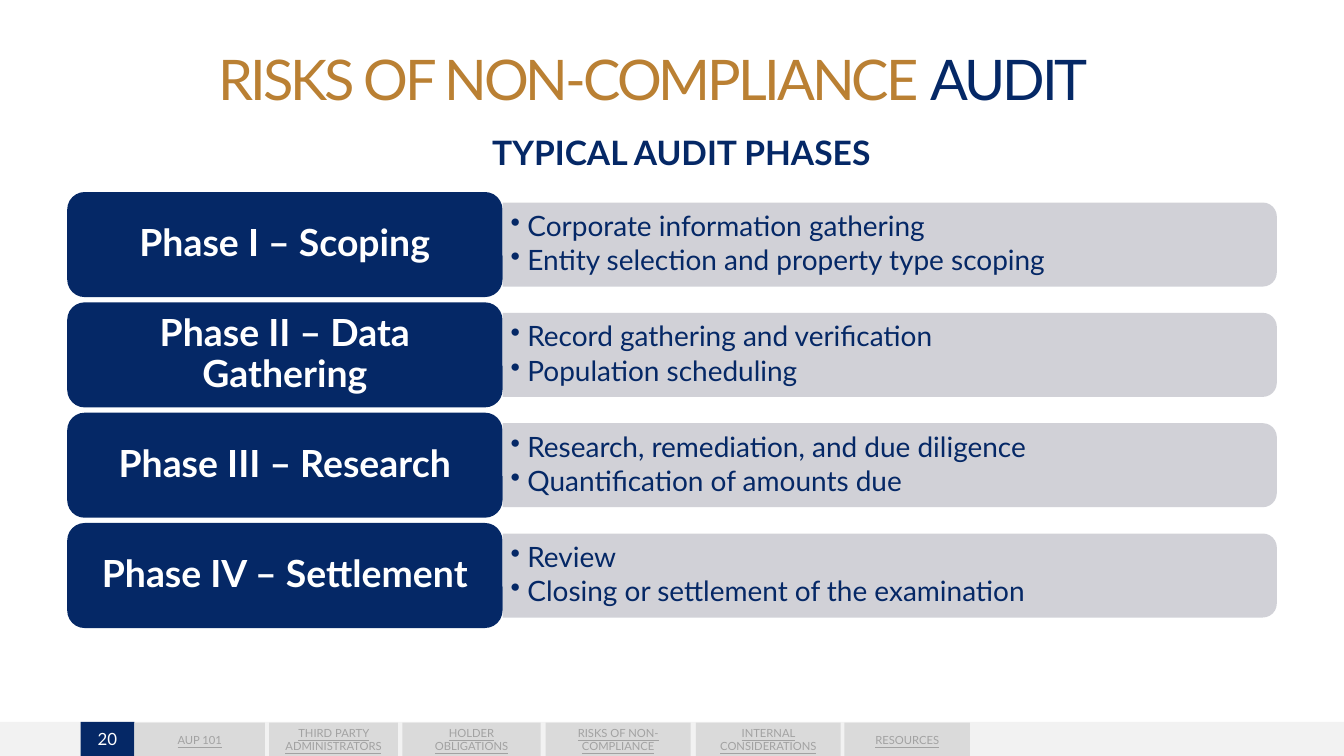
from lxml import etree
from pptx import Presentation
from pptx.dml.color import RGBColor
from pptx.enum import shapes, text
from pptx.oxml.ns import qn
from pptx.util import Pt

NAVY = RGBColor(0x05, 0x28, 0x66)
GOLD = RGBColor(0xBA, 0x80, 0x33)
WHITE = RGBColor(0xFF, 0xFF, 0xFF)
BAR_GREY = RGBColor(0xCC, 0xCD, 0xD3)
FOOTER_GREY = RGBColor(0xF2, 0xF2, 0xF2)
TAB_GREY = RGBColor(0xDA, 0xDA, 0xDA)
TAB_TEXT = RGBColor(0xA2, 0xA2, 0xA2)

SLIDE_W, SLIDE_H = 720, 405
FOOTER_TOP = 386.8
PHASE_TOP, PHASE_PITCH = 102.9, 59.1
LABEL_LEFT, LABEL_W, LABEL_H = 36, 233.2, 56.3
BAR_W, BAR_H = 414.8, 45

TABS = [
    ("AUP 101", 72, 70),
    ("THIRD PARTY ADMINISTRATORS", 144.2, 69),
    ("HOLDER OBLIGATIONS", 215.6, 74),
    ("RISKS OF NON-COMPLIANCE", 292.4, 77.6),
    ("INTERNAL CONSIDERATIONS", 372.8, 77.6),
    ("RESOURCES", 452.4, 67.2),
]
PHASES = [
    ("Phase I – Scoping",
     ["Corporate information gathering", "Entity selection and property type scoping"]),
    ("Phase II – Data Gathering",
     ["Record gathering and verification", "Population scheduling"]),
    ("Phase III – Research",
     ["Research, remediation, and due diligence", "Quantification of amounts due"]),
    ("Phase IV – Settlement",
     ["Review", "Closing or settlement of the examination"]),
]


def style_font(font, size, color, bold=False, underline=False):
    font.name = "Lato"
    font.size = Pt(size)
    font.color.rgb = color
    font.bold = bold
    font.underline = underline


def set_frame(frame, margin_x, margin_y, anchor=text.MSO_ANCHOR.MIDDLE):
    frame.word_wrap = True
    frame.vertical_anchor = anchor
    frame.margin_left = frame.margin_right = Pt(margin_x)
    frame.margin_top = frame.margin_bottom = Pt(margin_y)


def add_block(slide, preset, left, top, width, height, fill):
    block = slide.shapes.add_shape(preset, Pt(left), Pt(top), Pt(width), Pt(height))
    block.shadow.inherit = False
    block.fill.solid()
    block.fill.fore_color.rgb = fill
    block.line.fill.background()
    return block


def write_centered(shape, wording, size, color, margins, bold=False, underline=False):
    set_frame(shape.text_frame, *margins)
    shape.text_frame.text = wording
    paragraph = shape.text_frame.paragraphs[0]
    paragraph.alignment = text.PP_ALIGN.CENTER
    style_font(paragraph.runs[0].font, size, color, bold, underline)
    return paragraph


def add_title(slide):
    title = slide.shapes.title
    title.left, title.top, title.width, title.height = Pt(23.8), Pt(2.9), Pt(652.3), Pt(56.9)
    frame = title.text_frame
    set_frame(frame, 0, 0, text.MSO_ANCHOR.BOTTOM)
    frame.margin_top = Pt(3.6)
    frame.auto_size = text.MSO_AUTO_SIZE.NONE
    paragraph = frame.paragraphs[0]
    paragraph.alignment = text.PP_ALIGN.CENTER
    paragraph.line_spacing = 0.85
    for wording, color in (("RISKS OF NON-COMPLIANCE ", GOLD), ("AUDIT", NAVY)):
        run = paragraph.add_run()
        run.text = wording
        style_font(run.font, 30, color)
        run.font._element.set("spc", "-160")


def add_subtitle(slide):
    subtitle = slide.shapes.add_textbox(Pt(46.1), Pt(67), Pt(637.9), Pt(28.8))
    write_centered(subtitle, "TYPICAL AUDIT PHASES", 18, NAVY, (7.2, 3.6), bold=True)


def add_bullet(paragraph):
    properties = paragraph._p.get_or_add_pPr()
    properties.set("marL", str(Pt(9)))
    properties.set("indent", str(-Pt(9)))
    etree.SubElement(properties, qn("a:buChar")).set("char", "•")


def add_bar(slide, left, top):
    """Add a translucent bar rounded on its right side, a tall shape turned by 90 degrees."""
    bar = add_block(slide, shapes.MSO_SHAPE.ROUND_2_SAME_RECTANGLE,
                    left + (BAR_W - BAR_H) / 2, top + (BAR_H - BAR_W) / 2,
                    BAR_H, BAR_W, BAR_GREY)
    bar.rotation = 90
    color = bar.fill._xPr.find(".//" + qn("a:srgbClr"))
    etree.SubElement(color, qn("a:alpha")).set("val", "90000")


def add_steps(slide, steps, left, top):
    box = slide.shapes.add_textbox(Pt(left), Pt(top), Pt(BAR_W), Pt(BAR_H))
    frame = box.text_frame
    set_frame(frame, 4.3, 2.2)
    frame.text = "\n".join(steps)
    for paragraph in frame.paragraphs:
        add_bullet(paragraph)
        paragraph.level = 1
        paragraph.line_spacing = 0.9
        paragraph.space_after = Pt(2.25)
        style_font(paragraph.runs[0].font, 15, NAVY)


def add_phase(slide, name, steps, top):
    bar_left = LABEL_LEFT + LABEL_W
    bar_top = top + (LABEL_H - BAR_H) / 2
    add_bar(slide, bar_left, bar_top)
    add_steps(slide, steps, bar_left, bar_top)
    label = add_block(slide, shapes.MSO_SHAPE.ROUNDED_RECTANGLE,
                      LABEL_LEFT, top, LABEL_W, LABEL_H, NAVY)
    paragraph = write_centered(label, name, 20, WHITE, (8.6, 5.6), bold=True)
    paragraph.line_spacing = 0.9


def add_footer(slide):
    rectangle = shapes.MSO_SHAPE.RECTANGLE
    height = SLIDE_H - FOOTER_TOP
    add_block(slide, rectangle, 0, FOOTER_TOP, SLIDE_W, height, FOOTER_GREY)
    page = add_block(slide, rectangle, 43.2, FOOTER_TOP, 28.8, height, NAVY)
    write_centered(page, "20", 9, WHITE, (0, 0))
    for wording, left, width in TABS:
        tab = add_block(slide, rectangle, left, FOOTER_TOP + 0.4, width, height, TAB_GREY)
        write_centered(tab, wording, 6, TAB_TEXT, (7.2, 3.6), underline=True)


def main():
    deck = Presentation()
    deck.slide_width, deck.slide_height = Pt(SLIDE_W), Pt(SLIDE_H)
    slide = deck.slides.add_slide(deck.slide_layouts[5])
    add_footer(slide)
    add_title(slide)
    for row, (name, steps) in enumerate(PHASES):
        add_phase(slide, name, steps, PHASE_TOP + row * PHASE_PITCH)
    add_subtitle(slide)
    deck.save("out.pptx")


if __name__ == "__main__":
    main()
